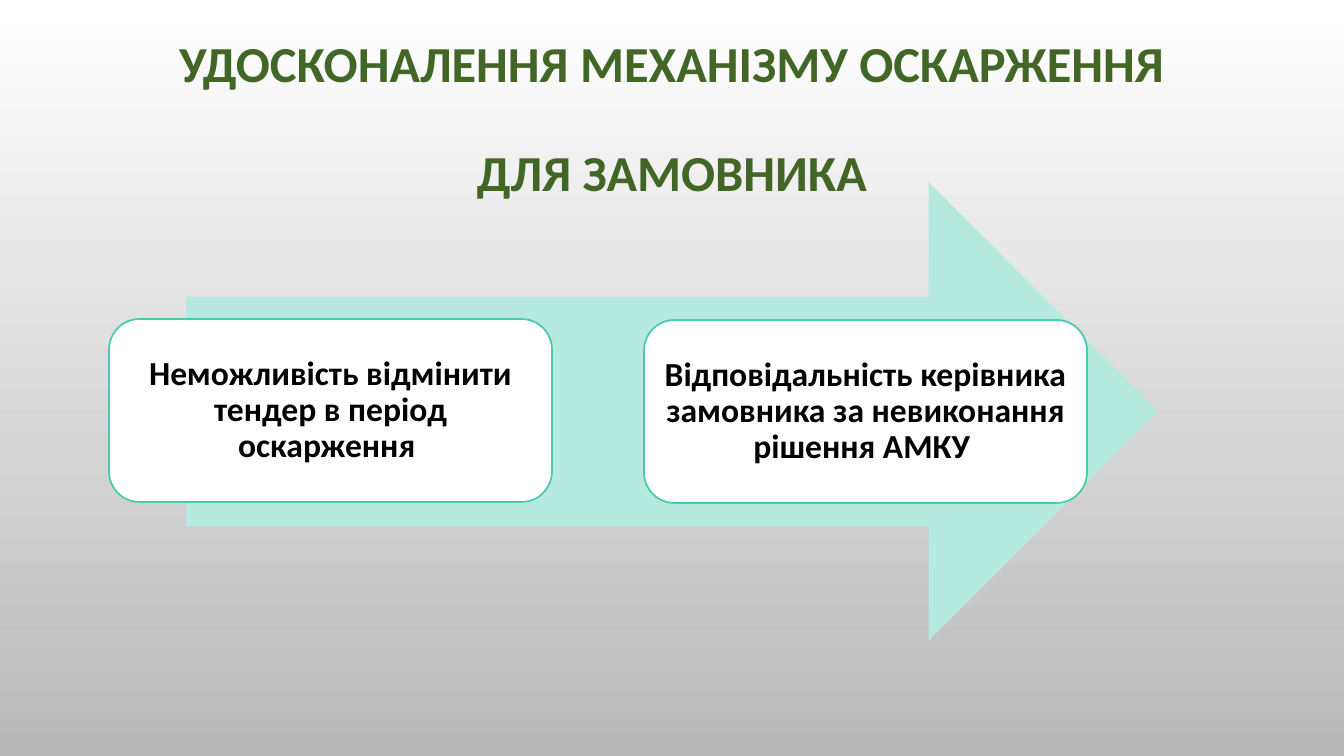
from dataclasses import dataclass

from pptx import Presentation
from pptx import util as u
from pptx.dml.color import RGBColor
from pptx.enum import shapes, text


@dataclass(frozen=True)
class Theme:
    """Colours, type sizes and font of the slide."""
    font: str = "Calibri"
    title: str = "426626"
    body: str = "000000"
    arrow: str = "B7EADE"
    card: str = "FFFFFF"
    outline: str = "4BCAAD"
    top: str = "FFFFFF"
    bottom: str = "B9B9B9"
    title_size: int = 36
    body_size: int = 24


THEME = Theme()
PX_PER_INCH = 100.8
SLIDE_SIZE = (1344, 756)
TITLE_BOX = (101, 33, 1142, 176)
PROCESS_BOX = (109, 182, 1049, 459)
TITLE_LINES = ["УДОСКОНАЛЕННЯ МЕХАНІЗМУ ОСКАРЖЕННЯ", "ДЛЯ ЗАМОВНИКА"]
CARDS = [
    "Неможливість відмінити тендер в період оскарження ",
    "Відповідальність керівника замовника за невиконання рішення АМКУ ",
]


def px(*lengths):
    """Turn pixel lengths into EMU."""
    return [u.Inches(length / PX_PER_INCH) for length in lengths]


def write(shape, lines, *, size, color, margin=10, gap=0):
    """Write bold centred paragraphs, separated by a gap in points."""
    frame = shape.text_frame
    frame.word_wrap = True
    frame.auto_size = text.MSO_AUTO_SIZE.NONE
    frame.vertical_anchor = text.MSO_ANCHOR.MIDDLE
    frame.margin_left, frame.margin_right = px(margin, margin)
    for index, line in enumerate(lines):
        paragraph = frame.add_paragraph() if index else frame.paragraphs[0]
        paragraph.text = line
        paragraph.alignment = text.PP_ALIGN.CENTER
        paragraph.line_spacing = 0.9
        paragraph.space_before = u.Pt(gap if index else 0)
        font = paragraph.font
        font.name, font.size, font.bold = THEME.font, u.Pt(size), True
        font.color.rgb = RGBColor.from_string(color)


def add_block(parent, kind, box, *, fill, line=None):
    """Add a flat preset shape, outlined if a line colour is given."""
    shape = parent.shapes.add_shape(kind, *px(*box))
    shape.shadow.inherit = False
    shape.fill.solid()
    shape.fill.fore_color.rgb = RGBColor.from_string(fill)
    if line:
        shape.line.color.rgb = RGBColor.from_string(line)
        shape.line.width = u.Pt(1.25)
    else:
        shape.line.fill.background()
    return shape


def paint_background(slide):
    """Fill the background from white at the top to grey at the bottom."""
    fill = slide.background.fill
    fill.gradient()
    fill.gradient_angle = 270
    for stop, color in zip(fill.gradient_stops, (THEME.top, THEME.bottom)):
        stop.color.rgb = RGBColor.from_string(color)


def add_title(slide, box, lines):
    """Place and format the title placeholder."""
    title = slide.shapes.title
    title.left, title.top, title.width, title.height = px(*box)
    write(title, lines, size=THEME.title_size, color=THEME.title, gap=39)


def add_process(slide, box, cards):
    """Draw the arrow and spread the cards along it."""
    left, top, width, height = box
    group = slide.shapes.add_group_shape()
    tail = 77
    add_block(group, shapes.MSO_SHAPE.RIGHT_ARROW,
              (left + tail, top, width - tail, height), fill=THEME.arrow)
    card_width, card_height, pitch = 443, 183, 535
    card_top = top + (height - card_height) // 2 - 1
    for index, label in enumerate(cards):
        card = add_block(group, shapes.MSO_SHAPE.ROUNDED_RECTANGLE,
                         (left + index * pitch, card_top + index, card_width, card_height),
                         fill=THEME.card, line=THEME.outline)
        write(card, [label], size=THEME.body_size, color=THEME.body, margin=9)


def main():
    """Build the slide and save it."""
    presentation = Presentation()
    presentation.slide_width, presentation.slide_height = px(*SLIDE_SIZE)
    slide = presentation.slides.add_slide(presentation.slide_layouts[5])
    paint_background(slide)
    add_title(slide, TITLE_BOX, TITLE_LINES)
    add_process(slide, PROCESS_BOX, CARDS)
    presentation.save("out.pptx")


if __name__ == "__main__":
    main()
